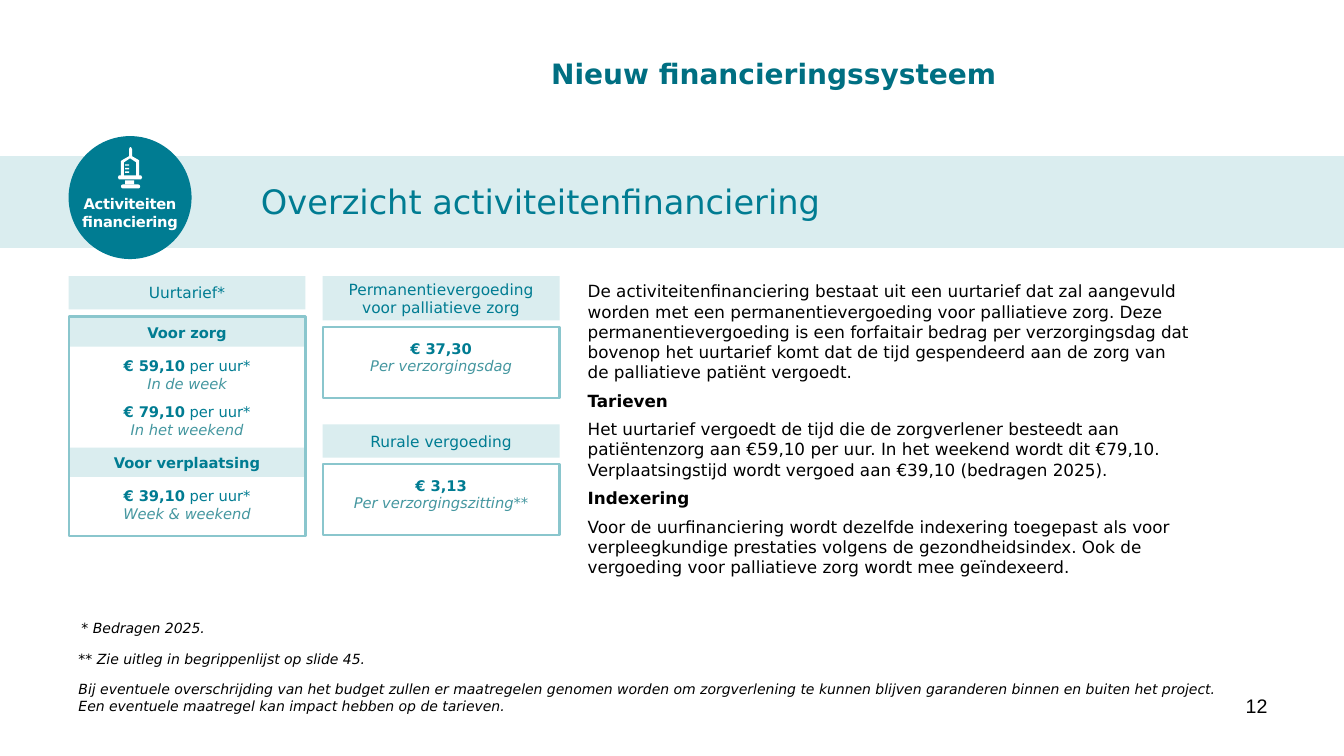
from copy import deepcopy
from dataclasses import dataclass

from pptx import Presentation
from pptx.dml.color import RGBColor
from pptx.enum.shapes import MSO_SHAPE
from pptx.enum.text import MSO_ANCHOR, MSO_AUTO_SIZE, PP_ALIGN
from pptx.util import Inches, Pt

RECTANGLE, OVAL = MSO_SHAPE.RECTANGLE, MSO_SHAPE.OVAL
TOP, MIDDLE = MSO_ANCHOR.TOP, MSO_ANCHOR.MIDDLE
LEFT, CENTER, RIGHT = PP_ALIGN.LEFT, PP_ALIGN.CENTER, PP_ALIGN.RIGHT
TITLE_ONLY = 5
NO_BREAK_SPACE = chr(160)


@dataclass(frozen=True)
class Style:
    size: float
    color: str
    bold: bool = False
    italic: bool = False
    font: str = "DejaVu Sans"
    spacing: float = 0


class Theme:
    pale = "DAEDEF"
    teal = "007C92"
    border = "8AC6CD"
    white = "FFFFFF"
    title = Style(20, "006F82", bold=True)
    subtitle = Style(24, teal)
    heading = Style(11, teal)
    amount = Style(10.5, teal, bold=True)
    unit = Style(10.5, teal)
    period = Style(10.5, "4597A0", italic=True)
    badge = Style(10.5, white, bold=True, spacing=-0.2)
    body = Style(12, "000000")
    body_bold = Style(12, "000000", bold=True)
    footnote = Style(10, "000000", italic=True)
    number = Style(14, "000000", font="Arial")


def add_run(paragraph, text, style):
    run = paragraph.add_run()
    run.text = text
    run.font.name = style.font
    run.font.size = Pt(style.size)
    run.font.bold = style.bold
    run.font.italic = style.italic
    run.font.color.rgb = RGBColor.from_string(style.color)
    if style.spacing:
        run._r.get_or_add_rPr().set("spc", str(round(style.spacing * 100)))
    return run


def add_lines(paragraph, text, style):
    """Add text whose line breaks take the same style as its runs."""
    first, *others = text.split("\n")
    run = add_run(paragraph, first, style)
    for line in others:
        paragraph.add_line_break()
        paragraph._p[-1].append(deepcopy(run._r.get_or_add_rPr()))
        add_run(paragraph, line, style)


def write(shape, paragraphs, align=LEFT, anchor=TOP, inset=(0.1, 0.05), after=()):
    """Fill a shape with paragraphs, each a list of (text, style) pairs."""
    frame = shape.text_frame
    frame.word_wrap = True
    frame.auto_size = MSO_AUTO_SIZE.NONE
    frame.vertical_anchor = anchor
    frame.margin_left = frame.margin_right = Inches(inset[0])
    frame.margin_top = frame.margin_bottom = Inches(inset[1])
    for index, pairs in enumerate(paragraphs):
        paragraph = frame.add_paragraph() if index else frame.paragraphs[0]
        paragraph.alignment = align
        if index < len(after):
            paragraph.space_after = Pt(after[index])
        for text, style in pairs:
            add_lines(paragraph, text, style)


def add_text(slide, box, paragraphs, **options):
    shape = slide.shapes.add_textbox(*map(Inches, box))
    write(shape, paragraphs, **options)


def paint(shape, fill):
    shape.shadow.inherit = False
    shape.fill.solid()
    shape.fill.fore_color.rgb = RGBColor.from_string(fill)
    shape.line.fill.background()


def add_filled(slide, kind, box, fill):
    shape = slide.shapes.add_shape(kind, *map(Inches, box))
    paint(shape, fill)
    return shape


def add_strip(slide, box, text, style):
    strip = add_filled(slide, RECTANGLE, box, Theme.pale)
    write(strip, [[(text, style)]], align=CENTER, anchor=MIDDLE)


def add_frame(slide, box):
    frame = slide.shapes.add_shape(RECTANGLE, *map(Inches, box))
    frame.shadow.inherit = False
    frame.fill.background()
    frame.line.color.rgb = RGBColor.from_string(Theme.border)
    frame.line.width = Pt(1.5)


def add_rates(slide, box, rates):
    """List rates given as (amount, unit, period), two lines each."""
    paragraphs = []
    for amount, unit, period in rates:
        paragraphs.append([(amount, Theme.amount)] + ([(unit, Theme.unit)] if unit else []))
        paragraphs.append([(period, Theme.period)])
    add_text(slide, box, paragraphs, align=CENTER, inset=(0.08, 0.05), after=(0, 8))


def add_header(slide):
    title = slide.shapes.title
    title.left, title.top, title.width, title.height = map(Inches, (2.68, 0.3, 9.99, 0.85))
    write(title, [[("Nieuw financieringssysteem", Theme.title)]], align=CENTER, anchor=MIDDLE)
    add_filled(slide, RECTANGLE, (0, 1.55, 13.33, 0.91), Theme.pale)
    add_text(slide, (2.49, 1.75, 9.99, 0.5),
             [[("Overzicht activiteitenfinanciering", Theme.subtitle)]])


def add_syringe(slide, left, top):
    """Draw the syringe from outlines in hundredths of an inch."""
    barrel = [(0, 30), (1, 28), (3, 28), (3, 14), (4, 13), (11, 9), (11, 2), (12, 0),
              (13, 0), (14, 2), (14, 9), (21, 13), (21, 28), (23, 28), (24, 30),
              (23, 32), (1, 32)]
    chamber = [(6, 15), (12, 11), (18, 15), (18, 28), (6, 28)]
    builder = slide.shapes.build_freeform(*barrel[0], scale=Inches(0.01))
    builder.add_line_segments(barrel[1:])
    builder.move_to(*chamber[0])
    builder.add_line_segments(chamber[1:])
    paint(builder.convert_to_shape(Inches(left), Inches(top)), Theme.white)
    for mark in range(3):
        box = (left + 0.07, top + 0.17 + 0.035 * mark, 0.04, 0.015)
        add_filled(slide, RECTANGLE, box, Theme.white)
    add_filled(slide, RECTANGLE, (left + 0.07, top + 0.33, 0.09, 0.04), Theme.white)
    plunger = add_filled(slide, MSO_SHAPE.ROUNDED_RECTANGLE,
                         (left + 0.03, top + 0.37, 0.19, 0.04), Theme.white)
    plunger.adjustments[0] = 0.5


def add_badge(slide, left, top, diameter):
    add_filled(slide, OVAL, (left, top, diameter, diameter), Theme.teal)
    add_syringe(slide, left + 0.49, top + 0.11)
    add_text(slide, (left - 0.11, top + 0.56, diameter + 0.22, 0.4),
             [[("Activiteiten\nfinanciering", Theme.badge)]],
             align=CENTER, anchor=MIDDLE, inset=(0.04, 0.05))


def add_hourly_card(slide, left, top, width):
    add_strip(slide, (left, top, width, 0.33), "Uurtarief*", Theme.heading)
    sections = [
        (0.41, 0.95, "Voor zorg", [("€ 59,10", " per uur*", "In de week"),
                                   ("€ 79,10", " per uur*", "In het weekend")]),
        (1.7, 0.47, "Voor verplaatsing", [("€ 39,10", " per uur*", "Week & weekend")]),
    ]
    for offset, height, name, rates in sections:
        add_strip(slide, (left, top + offset, width, 0.29), name, Theme.amount)
        add_rates(slide, (left, top + offset + 0.34, width, height), rates)
    add_frame(slide, (left, top + 0.4, width, 2.18))


def add_fee_card(slide, left, top, width, strip_height, name, amount, period):
    add_strip(slide, (left, top, width, strip_height), name, Theme.heading)
    frame_top = top + strip_height + 0.06
    add_frame(slide, (left, frame_top, width, 0.71))
    add_rates(slide, (left, frame_top + 0.08, width, 0.47), [(amount, "", period)])


def add_explanation(slide, box):
    paragraphs = [
        ("De activiteitenfinanciering bestaat uit een uurtarief dat zal aangevuld worden met "
         f"een permanentievergoeding voor palliatieve zorg.{NO_BREAK_SPACE}Deze "
         "permanentievergoeding is een forfaitair bedrag per verzorgingsdag dat bovenop het "
         f"uurtarief komt dat de tijd{NO_BREAK_SPACE}gespendeerd aan de zorg van "
         f"de{NO_BREAK_SPACE}palliatieve patiënt vergoedt.", Theme.body),
        ("Tarieven", Theme.body_bold),
        ("Het uurtarief vergoedt de tijd die de zorgverlener besteedt aan patiëntenzorg aan "
         "€59,10 per uur. In het weekend wordt dit €79,10. Verplaatsingstijd wordt vergoed "
         "aan €39,10 (bedragen 2025).", Theme.body),
        ("Indexering", Theme.body_bold),
        ("Voor de uurfinanciering wordt dezelfde indexering toegepast als voor "
         "verpleegkundige prestaties volgens de gezondheidsindex. Ook de vergoeding voor "
         "palliatieve zorg wordt mee geïndexeerd.", Theme.body),
    ]
    add_text(slide, box, [[pair] for pair in paragraphs], after=[6] * len(paragraphs))


def add_footer(slide, left, top):
    notes = [
        (0.03, 5.95, 0.27, "* Bedragen 2025."),
        (0, 5.95, 0.27, "** Zie uitleg in begrippenlijst op slide 45."),
        (0, 11.59, 0.44,
         "Bij eventuele overschrijding van het budget zullen er maatregelen genomen worden om "
         "zorgverlening te kunnen blijven garanderen binnen en buiten het project. "
         "Een eventuele maatregel kan impact hebben op de tarieven."),
    ]
    for row, (indent, width, height, text) in enumerate(notes):
        add_text(slide, (left + indent, top + 0.3 * row, width, height),
                 [[(text, Theme.footnote)]])
    add_text(slide, (9.56, 6.83, 3.11, 0.52), [[("12", Theme.number)]], align=RIGHT)


def main():
    presentation = Presentation()
    presentation.slide_width, presentation.slide_height = Inches(13.33), Inches(7.5)
    slide = presentation.slides.add_slide(presentation.slide_layouts[TITLE_ONLY])
    add_header(slide)
    add_badge(slide, 0.68, 1.35, 1.22)
    add_hourly_card(slide, 0.68, 2.74, 2.35)
    add_fee_card(slide, 3.2, 2.74, 2.35, 0.44, "Permanentievergoeding voor palliatieve zorg",
                 "€ 37,30", "Per verzorgingsdag")
    add_fee_card(slide, 3.2, 4.21, 2.35, 0.33, "Rurale vergoeding",
                 "€ 3,13", "Per verzorgingszitting**")
    add_explanation(slide, (5.73, 2.74, 6.55, 3.42))
    add_footer(slide, 0.68, 6.1)
    presentation.save("out.pptx")


if __name__ == "__main__":
    main()
